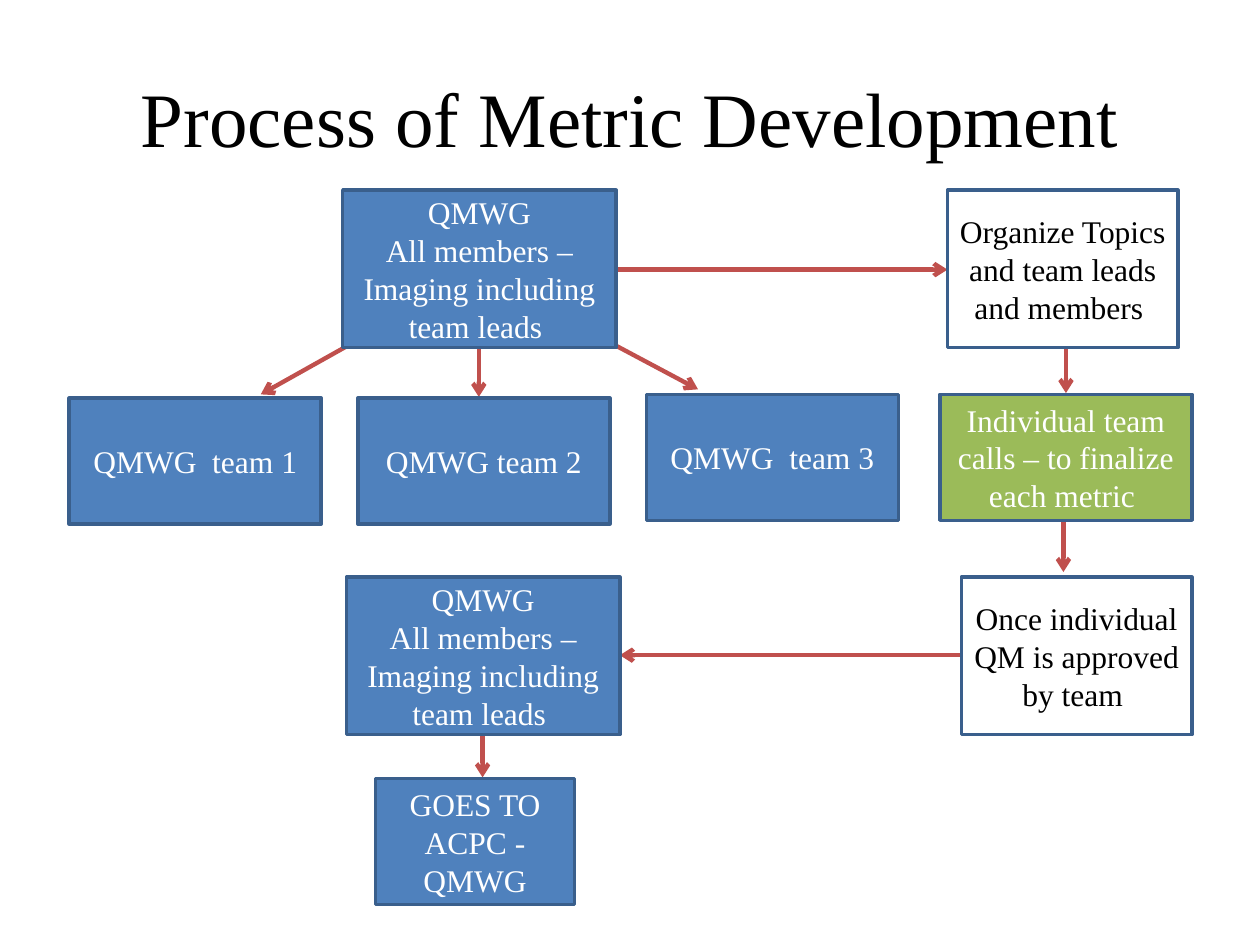
from dataclasses import dataclass

from lxml.etree import SubElement
from pptx import Presentation
from pptx.dml.color import RGBColor as RGB
from pptx.enum.shapes import MSO_CONNECTOR as Link, MSO_SHAPE as Form
from pptx.enum.text import MSO_ANCHOR as Anchor, PP_ALIGN as Align
from pptx.oxml.ns import qn
from pptx.util import Inches, Pt


@dataclass(frozen=True)
class Theme:
    font: str = "Times New Roman"
    head: int = 44
    body: int = 18
    edge: float = 2
    link: float = 2.5
    black: str = "000000"
    white: str = "FFFFFF"
    blue: str = "4F81BD"
    green: str = "9BBB59"
    navy: str = "3A5F8C"
    red: str = "C0504D"


class Chart:
    """Holds the theme and the slide being drawn."""

    def __init__(self, slide, theme):
        self.slide = slide
        self.theme = theme

    def label(self, frame, text, size, color):
        frame.text = text
        frame.word_wrap = True
        frame.vertical_anchor = Anchor.MIDDLE
        for para in frame.paragraphs:
            para.alignment = Align.CENTER
            for run in para.runs:
                run.font.name = self.theme.font
                run.font.size = Pt(size)
                run.font.color.rgb = RGB.from_string(color)

    def title(self, text, left, top, width, height):
        shape = self.slide.shapes.title
        shape.left, shape.top = Inches(left), Inches(top)
        shape.width, shape.height = Inches(width), Inches(height)
        self.label(shape.text_frame, text, self.theme.head, self.theme.black)

    def box(self, text, left, top, width, height, fill, color):
        shape = self.slide.shapes.add_shape(
            Form.RECTANGLE, Inches(left), Inches(top), Inches(width), Inches(height))
        shape.shadow.inherit = False
        shape.fill.solid()
        shape.fill.fore_color.rgb = RGB.from_string(fill)
        shape.line.color.rgb = RGB.from_string(self.theme.navy)
        shape.line.width = Pt(self.theme.edge)
        self.label(shape.text_frame, text, self.theme.body, color)

    def arrow(self, x1, y1, x2, y2):
        link = self.slide.shapes.add_connector(
            Link.STRAIGHT, Inches(x1), Inches(y1), Inches(x2), Inches(y2))
        link.line.color.rgb = RGB.from_string(self.theme.red)
        link.line.width = Pt(self.theme.link)
        props = link.element.spPr
        SubElement(props.find(qn("a:ln")), qn("a:tailEnd"), type="arrow")
        SubElement(props, qn("a:effectLst"))


def main():
    deck = Presentation()
    deck.slide_width, deck.slide_height = Inches(10), Inches(7.5)
    theme = Theme()
    chart = Chart(deck.slides.add_slide(deck.slide_layouts[5]), theme)
    chart.title("Process of Metric Development", 0.5, 0.3, 9, 1.25)

    # Arrows go first so that the boxes cover their ends
    for ends in (
        (2.82, 2.71, 2.07, 3.13),  # group to team 1
        (3.8, 2.6, 3.8, 3.15),     # group to team 2
        (4.75, 2.67, 5.54, 3.09),  # group to team 3
        (4.89, 2.14, 7.52, 2.14),  # group to topics
        (8.46, 2.62, 8.46, 3.12),  # topics to calls
        (8.44, 4.04, 8.44, 4.54),  # calls to approval
        (7.63, 5.2, 4.92, 5.2),    # approval to group
        (3.83, 5.67, 3.83, 6.17),  # group to last step
    ):
        chart.arrow(*ends)

    # Teams
    for text, left, top in (
        ("QMWG  team 1", 0.55, 3.16),
        ("QMWG team 2", 2.84, 3.16),
        ("QMWG  team 3", 5.13, 3.13),
    ):
        chart.box(text, left, top, 2, 1, theme.blue, theme.white)

    # Whole group, before and after the team work
    group = "QMWG\nAll members – Imaging including team leads "
    for left, top in ((2.72, 1.51), (2.75, 4.58)):
        chart.box(group, left, top, 2.17, 1.25, theme.blue, theme.white)

    # Steps in the right column
    for text, left, top in (
        ("Organize Topics and team leads and members ", 7.52, 1.51),
        ("Once individual QM is approved by team ", 7.63, 4.58),
    ):
        chart.box(text, left, top, 1.83, 1.25, theme.white, theme.black)
    chart.box("Individual team calls – to finalize each metric ",
              7.46, 3.13, 2, 1, theme.green, theme.white)

    # Last step
    chart.box("GOES TO ACPC - QMWG", 2.98, 6.18, 1.58, 1, theme.blue, theme.white)

    deck.save("out.pptx")


if __name__ == "__main__":
    main()
